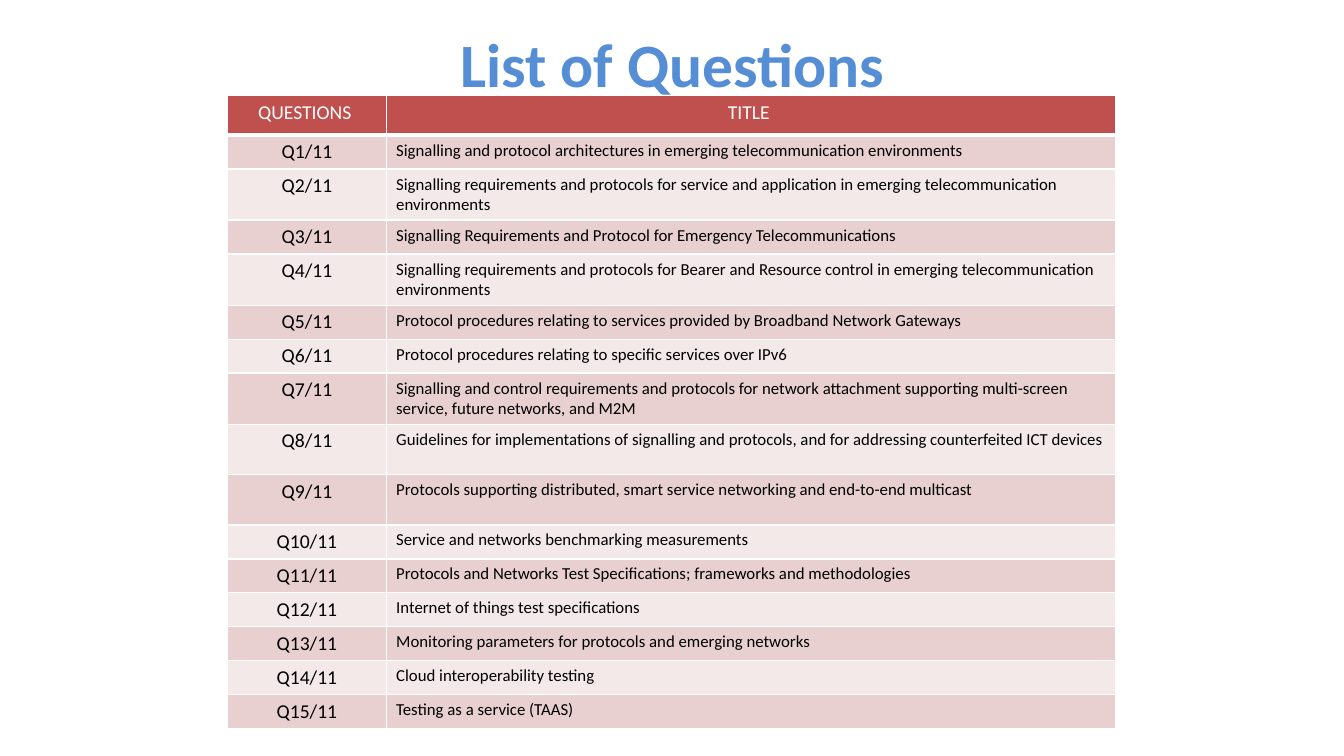
"""Build the List of Questions slide with its table."""
import pptx
import pptx.dml.color
import pptx.enum.text
import pptx.oxml.ns
import pptx.util
from lxml import etree

Inches = pptx.util.Inches
CENTER = pptx.enum.text.PP_ALIGN.CENTER
LEFT = pptx.enum.text.PP_ALIGN.LEFT
MIDDLE = pptx.enum.text.MSO_ANCHOR.MIDDLE

TITLE = "List of Questions"
HEADINGS = ("QUESTIONS ", "TITLE ")
QUESTIONS = [
    "Signalling and protocol architectures in emerging telecommunication environments",
    "Signalling requirements and protocols for service and application in emerging telecommunication environments",
    "Signalling Requirements and Protocol for Emergency Telecommunications",
    "Signalling requirements and protocols for Bearer and Resource control in emerging telecommunication environments",
    "Protocol procedures relating to services provided by Broadband Network Gateways",
    "Protocol procedures relating to specific services over IPv6",
    "Signalling and control requirements and protocols for network attachment supporting multi-screen service, future networks, and M2M",
    "Guidelines for implementations of signalling and protocols, and for addressing counterfeited ICT devices",
    "Protocols supporting distributed, smart service networking and end-to-end multicast",
    "Service and networks benchmarking measurements",
    "Protocols and Networks Test Specifications; frameworks and methodologies",
    "Internet of things test specifications",
    "Monitoring parameters for protocols and emerging networks",
    "Cloud interoperability testing",
    "Testing as a service (TAAS)",
]
TALL_QUESTIONS = {2, 4, 8, 9}
HEADER_HEIGHT, ROW_HEIGHT, TALL_HEIGHT = 0.39, 0.33, 0.5
COLUMN_WIDTHS = (1.57, 7.24)
TABLE_LEFT, TABLE_TOP = 2.26, 0.95
HEADER_FILL, BAND_FILLS = "C0504D", ("F4E9E9", "E8D0D0")


def color(value):
    return pptx.dml.color.RGBColor.from_string(value)


def write(frame, text, align, size, ink, bold=False):
    para = frame.paragraphs[0]
    para.alignment = align
    span = para.add_run()
    span.text = text
    styles = {"name": "Calibri", "size": pptx.util.Pt(size), "bold": bold}
    for name, value in styles.items():
        setattr(span.font, name, value)
    span.font.color.rgb = color(ink)


def add_borders(cell, bottom):
    properties = cell._tc.get_or_add_tcPr()
    for side, points in {"lnL": 1, "lnR": 1, "lnT": 1, "lnB": bottom}.items():
        line = etree.SubElement(properties, pptx.oxml.ns.qn("a:" + side))
        line.set("w", str(pptx.util.Pt(points)))
        fill = etree.SubElement(line, pptx.oxml.ns.qn("a:solidFill"))
        etree.SubElement(fill, pptx.oxml.ns.qn("a:srgbClr")).set("val", "FFFFFF")


def add_title(page):
    box = page.shapes.title
    place = {"left": 2.17, "top": 0, "width": 9, "height": 1.25}
    for name, value in place.items():
        setattr(box, name, Inches(value))
    box.text_frame.vertical_anchor = MIDDLE
    write(box.text_frame, TITLE, CENTER, 44, "558ED5", True)


def add_questions(page):
    rows = [HEADINGS]
    rows += [(f"Q{number}/11", text) for number, text in enumerate(QUESTIONS, 1)]
    heights = [HEADER_HEIGHT] + [
        TALL_HEIGHT if number in TALL_QUESTIONS else ROW_HEIGHT
        for number in range(1, len(rows))
    ]
    table = page.shapes.add_table(
        len(rows), len(COLUMN_WIDTHS), Inches(TABLE_LEFT), Inches(TABLE_TOP),
        Inches(sum(COLUMN_WIDTHS)), Inches(sum(heights)),
    ).table
    for column, width in zip(table.columns, COLUMN_WIDTHS):
        column.width = Inches(width)
    for number, (texts, height) in enumerate(zip(rows, heights)):
        table.rows[number].height = Inches(height)
        header = number == 0
        for index, text in enumerate(texts):
            cell = table.cell(number, index)
            add_borders(cell, 3 if header else 1)
            cell.fill.solid()
            cell.fill.fore_color.rgb = color(HEADER_FILL if header else BAND_FILLS[number % 2])
            centered = header or index == 0
            write(cell.text_frame, text, CENTER if centered else LEFT,
                  14 if centered else 12, "FFFFFF" if header else "000000")


def main():
    deck = pptx.Presentation()
    deck.slide_width, deck.slide_height = Inches(13.33), Inches(7.5)
    page = deck.slides.add_slide(deck.slide_layouts[5])
    add_title(page)
    add_questions(page)
    deck.save("out.pptx")


if __name__ == "__main__":
    main()
